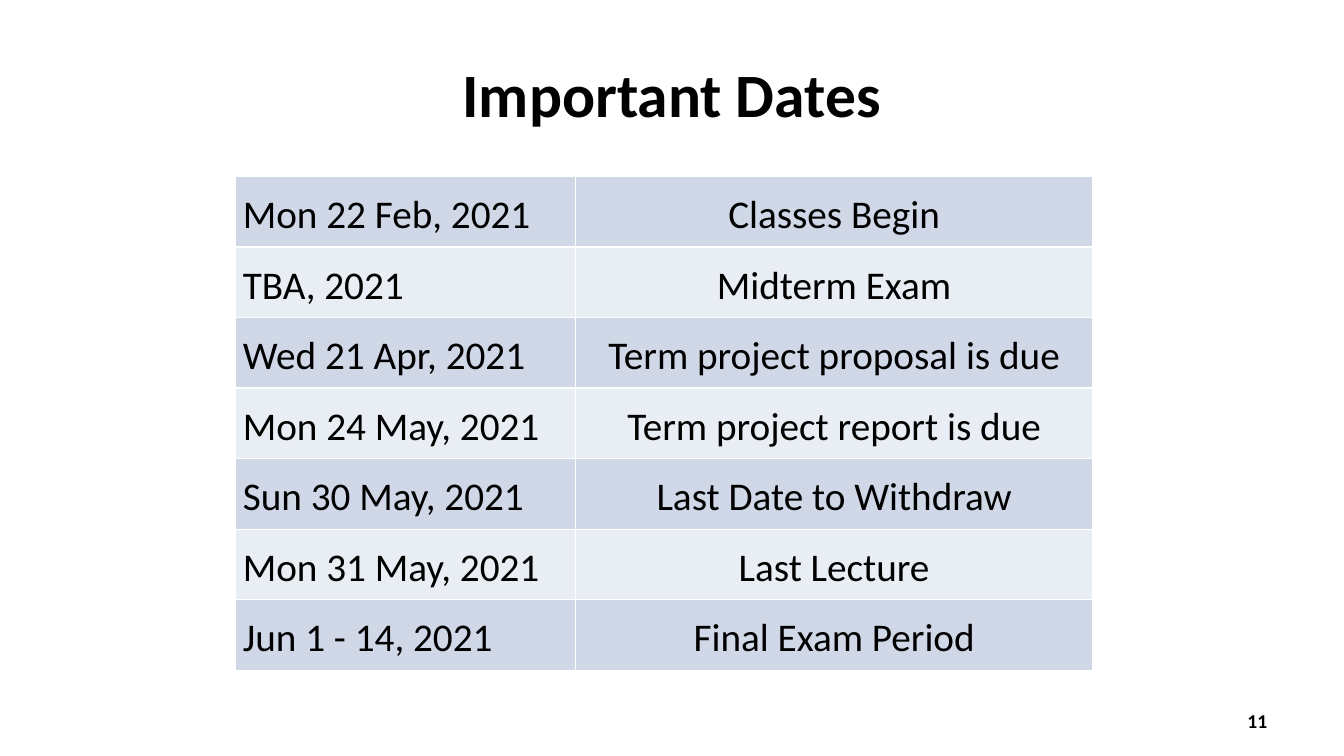
import pptx
import pptx.util
import pptx.dml.color
import pptx.enum.text
import pptx.oxml
import pptx.oxml.ns

Pt = pptx.util.Pt
PP_ALIGN = pptx.enum.text.PP_ALIGN
MIDDLE = pptx.enum.text.MSO_ANCHOR.MIDDLE


def rgb(value):
    return pptx.dml.color.RGBColor.from_string(value)


def format_paragraph(p, size, bold, align):
    p.alignment = align
    for r in p.runs:
        r.font.name = "Calibri"
        r.font.size = Pt(size)
        r.font.bold = bold
        r.font.color.rgb = rgb("000000")


prs = pptx.Presentation()
prs.slide_width, prs.slide_height = Pt(960), Pt(540)
s = prs.slides.add_slide(prs.slide_layouts[5])

# Title
title = s.shapes.title
title.left, title.top, title.width, title.height = Pt(48), Pt(21.6), Pt(864), Pt(90)
title.text_frame.text = "Important Dates"
title.text_frame.vertical_anchor = MIDDLE
format_paragraph(title.text_frame.paragraphs[0], 44, True, PP_ALIGN.CENTER)

# Table of dates
dates = [
    ("Mon 22 Feb, 2021", "Classes Begin"),
    ("TBA, 2021", "Midterm Exam"),
    ("Wed 21 Apr, 2021", "Term project proposal is due"),
    ("Mon 24 May, 2021", "Term project report is due"),
    ("Sun 30 May, 2021", "Last Date to Withdraw"),
    ("Mon 31 May, 2021", "Last Lecture"),
    ("Jun 1 - 14, 2021", "Final Exam Period"),
]
col_widths = [242.6, 369.4]
row_height = 50.4
bands = ["D0D8E8", "E9EDF4"]
aligns = [PP_ALIGN.LEFT, PP_ALIGN.CENTER]

table = s.shapes.add_table(len(dates), 2, Pt(168.5), Pt(126), Pt(sum(col_widths)),
                           Pt(row_height * len(dates))).table
table.first_row = False
for column, width in zip(table.columns, col_widths):
    column.width = Pt(width)
for i, row in enumerate(dates):
    table.rows[i].height = Pt(row_height)
    for j, text in enumerate(row):
        cell = table.cell(i, j)
        cell.margin_left = cell.margin_right = Pt(5)
        cell.margin_top = cell.margin_bottom = 0
        cell.vertical_anchor = MIDDLE
        cell.text_frame.text = text
        p = cell.text_frame.paragraphs[0]
        p.line_spacing = 1.15
        format_paragraph(p, 28, False, aligns[j])

        # White cell borders, then the band colour
        tcPr = cell._tc.get_or_add_tcPr()
        for side in ("lnL", "lnR", "lnT", "lnB"):
            tcPr.append(pptx.oxml.parse_xml(
                f'<a:{side} {pptx.oxml.ns.nsdecls("a")} w="{Pt(1)}"><a:solidFill>'
                f'<a:srgbClr val="FFFFFF"/></a:solidFill></a:{side}>'))
        cell.fill.solid()
        cell.fill.fore_color.rgb = rgb(bands[i % 2])

# Slide number
sp = s.shapes.add_textbox(Pt(688.3), Pt(500.4), Pt(224), Pt(28.8))
tf = sp.text_frame
tf.word_wrap = True
tf.vertical_anchor = MIDDLE
tf.text = "11"
format_paragraph(tf.paragraphs[0], 14, True, PP_ALIGN.RIGHT)

prs.save("out.pptx")
